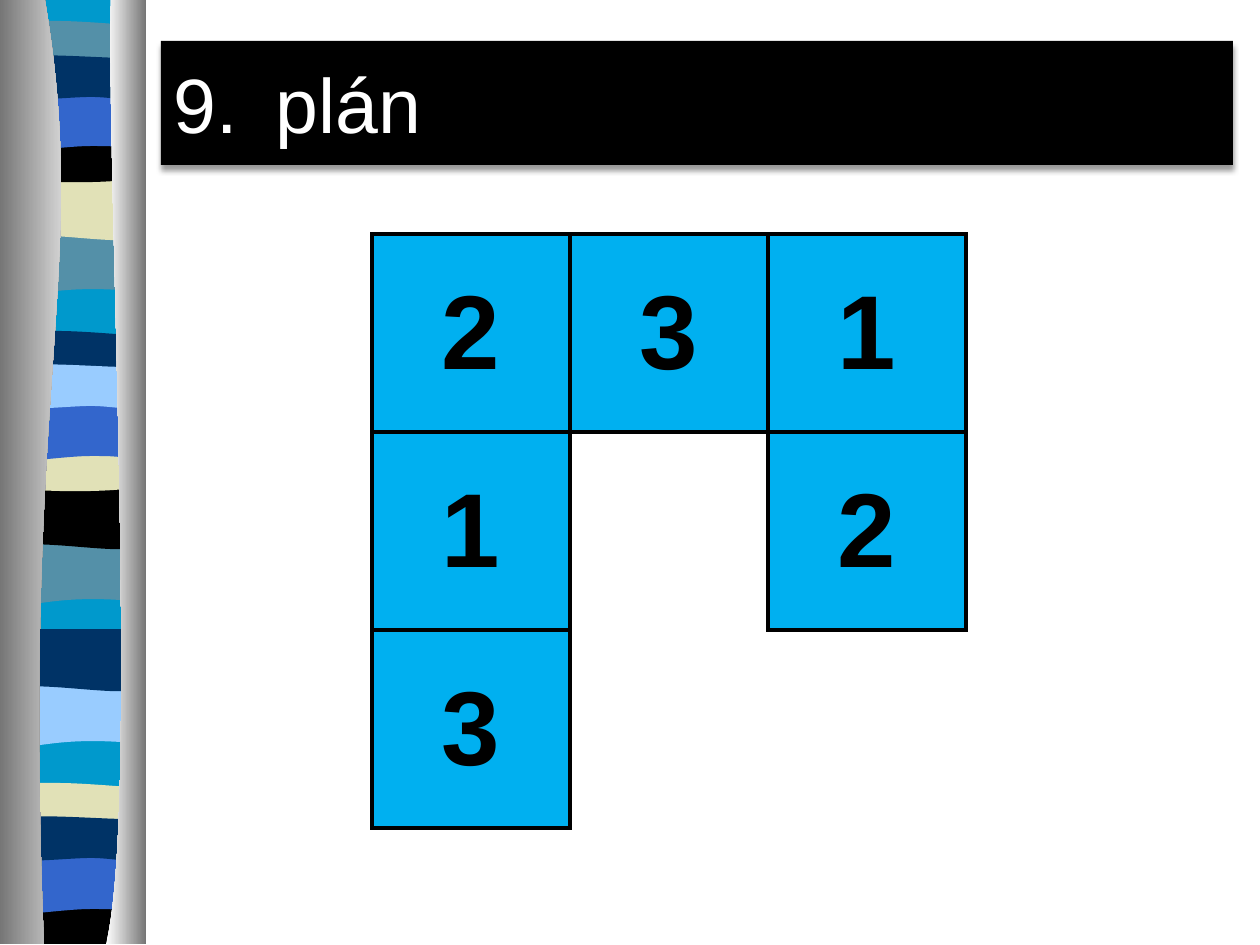
from pptx import Presentation
from pptx.dml.color import RGBColor
from pptx.enum.text import MSO_ANCHOR as Anchor, PP_ALIGN as Align
from pptx.oxml import parse_xml
from pptx.oxml.ns import nsdecls, qn
from pptx.util import Pt

PX = 914400 // 126
SIZE = (1260, 945)
LEFT, RIGHT = 6, 143
TITLE, START = "plán", 9
BAR = (161, 41, 1072, 124)
INK, AQUA, CYAN = "000000", "00B0F0", "0099CC"
SLATE, CREAM, BLUE, NAVY, SKY = "5490A8", "E1E1B7", "3366CC", "003366", "99CCFF"

GRID = [["2", "3", "1"],
        ["1", "", "2"],
        ["3", "", ""]]
GRID_X, GRID_Y, CELL = 372, 234, 198

# Each wave: Bézier points of the top edge (left to right), then of the
# bottom edge (right to left), with y measured from the band's own level.
# An edge of two points is straight.
FLAT = [(LEFT, 0), (RIGHT, 0)]
WAVES = {
    "swell": (FLAT, [(RIGHT, 59), (49, 49), (30, 69), (LEFT, 59)]),
    "roll": (FLAT, [(RIGHT, 59), (121, 69), (49, 52), (LEFT, 59)]),
    "crest": ([(LEFT, 0), (15, -6), (36, -5), (59, -5),
               (82, -5), (126, -1), (RIGHT, 0)],
              [(RIGHT, 30), (121, 36), (30, 36), (LEFT, 30)]),
    "dip": ([(LEFT, 0), (90, 6), (115, 0), (RIGHT, 0)],
            [(RIGHT, 41), (121, 48), (30, 48), (LEFT, 41)]),
    "base": ([(LEFT, 0), (90, 6), (115, 0), (RIGHT, 0)],
             [(RIGHT, 47), (LEFT, 47)]),
    "arch": (FLAT, [(RIGHT, 59), (122, 53), (113, 53), (91, 53),
                    (68, 53), (28, 59), (LEFT, 59)]),
    "bump": ([(LEFT, 0), (26, -6), (100, 0), (122, 0),
              (145, 0), (139, 0), (RIGHT, 0)],
             [(RIGHT, 39), (135, 45), (113, 39), (91, 39),
              (68, 39), (21, 45), (LEFT, 39)]),
}
BANDS = [
    ("swell", 233, SLATE), ("roll", 178, CREAM), ("crest", 26, SLATE),
    ("dip", 136, INK), ("arch", 93, BLUE), ("bump", 58, NAVY),
    ("swell", 543, SLATE), ("roll", 487, INK), ("crest", 336, NAVY),
    ("dip", 445, CREAM), ("arch", 403, BLUE), ("bump", 367, SKY),
    ("swell", 685, SKY), ("roll", 629, NAVY), ("crest", 788, CREAM),
    ("base", 897, INK), ("arch", 856, BLUE), ("bump", 819, NAVY),
]
# Each rail: inner curve, x of the straight outer side, gradient ends
RAILS = [
    ([(45, 0), (91, 272), (21, 373), (44, 944)], 0, ("767676", "FFFFFF")),
    ([(111, 0), (106, 158), (140, 814), (106, 944)], 146, ("FFFFFF", "767676")),
]


def rgb(code):
    return RGBColor.from_string(code)


def outline(group, *edges):
    """Join edges by straight lines; an edge of 4, 7... points is curved."""
    pts = [(x * PX, y * PX) for edge in edges for x, y in edge]
    pen = group.shapes.build_freeform(*pts[0], scale=1.0)
    pen.add_line_segments(pts[1:], close=True)
    shape = pen.convert_to_shape()
    shape.shadow.inherit = False
    shape.line.fill.background()
    lines = list(shape._element.iter(qn("a:lnTo")))
    pos = 0
    for edge in edges:
        if len(edge) > 2:
            for i in range(pos, pos + len(edge) - 1, 3):
                bend(lines[i:i + 3])
        pos += len(edge)
    return shape


def bend(lines):
    """Turn three line steps into one cubic Bézier step."""
    cubic = parse_xml(f'<a:cubicBezTo {nsdecls("a")}/>')
    lines[0].addprevious(cubic)
    for line in lines:
        cubic.append(line[0])
        line.getparent().remove(line)


def paint(shape, color):
    shape.fill.solid()
    shape.fill.fore_color.rgb = rgb(color)


def style(run, size, color, bold=False):
    font = run.font
    font.name, font.size, font.bold = "Arial", Pt(size), bold
    font.color.rgb = rgb(color)


def add_strip(slide, master):
    """Draw the side strip as one group and put it on the master."""
    group = slide.shapes.add_group_shape()
    paint(outline(group, FLAT, [(RIGHT, 941), (LEFT, 941)]), CYAN)
    for wave, y, color in BANDS:
        edges = [[(x, y + dy) for x, dy in edge] for edge in WAVES[wave]]
        paint(outline(group, *edges), color)
    for edge, side, ends in RAILS:
        rail = outline(group, edge, [(side, 944), (side, 0)])
        rail.fill.gradient()
        rail.fill.gradient_angle = 0
        for stop, pos, color in zip(rail.fill.gradient_stops, (0, 1), ends):
            stop.position = pos
            stop.color.rgb = rgb(color)
    master.shapes._spTree.insert(2, group._element)


def add_title(slide):
    bar = slide.shapes.title
    bar.left, bar.top, bar.width, bar.height = [v * PX for v in BAR]
    paint(bar, INK)
    bar._element.spPr.append(parse_xml(
        f'<a:effectLst {nsdecls("a")}><a:outerShdw blurRad="40000" dist="38100"'
        ' dir="5400000" rotWithShape="0"><a:srgbClr val="000000">'
        '<a:alpha val="40000"/></a:srgbClr></a:outerShdw></a:effectLst>'))
    frame = bar.text_frame
    frame.word_wrap = True
    frame.vertical_anchor = Anchor.MIDDLE
    para = frame.paragraphs[0]
    para.alignment = Align.LEFT
    run = para.add_run()
    run.text = TITLE
    style(run, 44, "FFFFFF")
    props = para._p.get_or_add_pPr()
    props.set("marL", str(102 * PX))
    props.set("indent", str(-102 * PX))
    props.append(parse_xml(f'<a:buAutoNum {nsdecls("a")} type="arabicPeriod"'
                           f' startAt="{START}"/>'))


def full(r, c):
    return 0 <= r < len(GRID) and 0 <= c < len(GRID[r]) and GRID[r][c] != ""


def edge_cell(cell, r, c):
    """Line every side that touches a filled square."""
    sides = [("L", 0, -1), ("R", 0, 1), ("T", -1, 0), ("B", 1, 0)]
    props = cell._tc.get_or_add_tcPr()
    for i, (side, dr, dc) in enumerate(sides):
        fill = "<a:noFill/>"
        if full(r, c) or full(r + dr, c + dc):
            fill = f'<a:solidFill><a:srgbClr val="{INK}"/></a:solidFill>'
        props.insert(i, parse_xml(f'<a:ln{side} {nsdecls("a")} w="{Pt(2.25)}">'
                                  f'{fill}</a:ln{side}>'))


def add_grid(slide):
    rows, cols = len(GRID), len(GRID[0])
    table = slide.shapes.add_table(rows, cols, GRID_X * PX, GRID_Y * PX,
                                   cols * CELL * PX, rows * CELL * PX).table
    table.first_row = table.horz_banding = False
    for r, row in enumerate(GRID):
        for c, num in enumerate(row):
            cell = table.cell(r, c)
            cell.vertical_anchor = Anchor.MIDDLE
            if num:
                paint(cell, AQUA)
                para = cell.text_frame.paragraphs[0]
                para.alignment = Align.CENTER
                run = para.add_run()
                run.text = num
                style(run, 60, INK, True)
            else:
                cell.fill.background()
            edge_cell(cell, r, c)


def main():
    deck = Presentation()
    deck.slide_width, deck.slide_height = [v * PX for v in SIZE]
    slide = deck.slides.add_slide(deck.slide_layouts[5])
    add_strip(slide, deck.slide_master)
    add_title(slide)
    add_grid(slide)
    deck.save("out.pptx")


if __name__ == "__main__":
    main()
